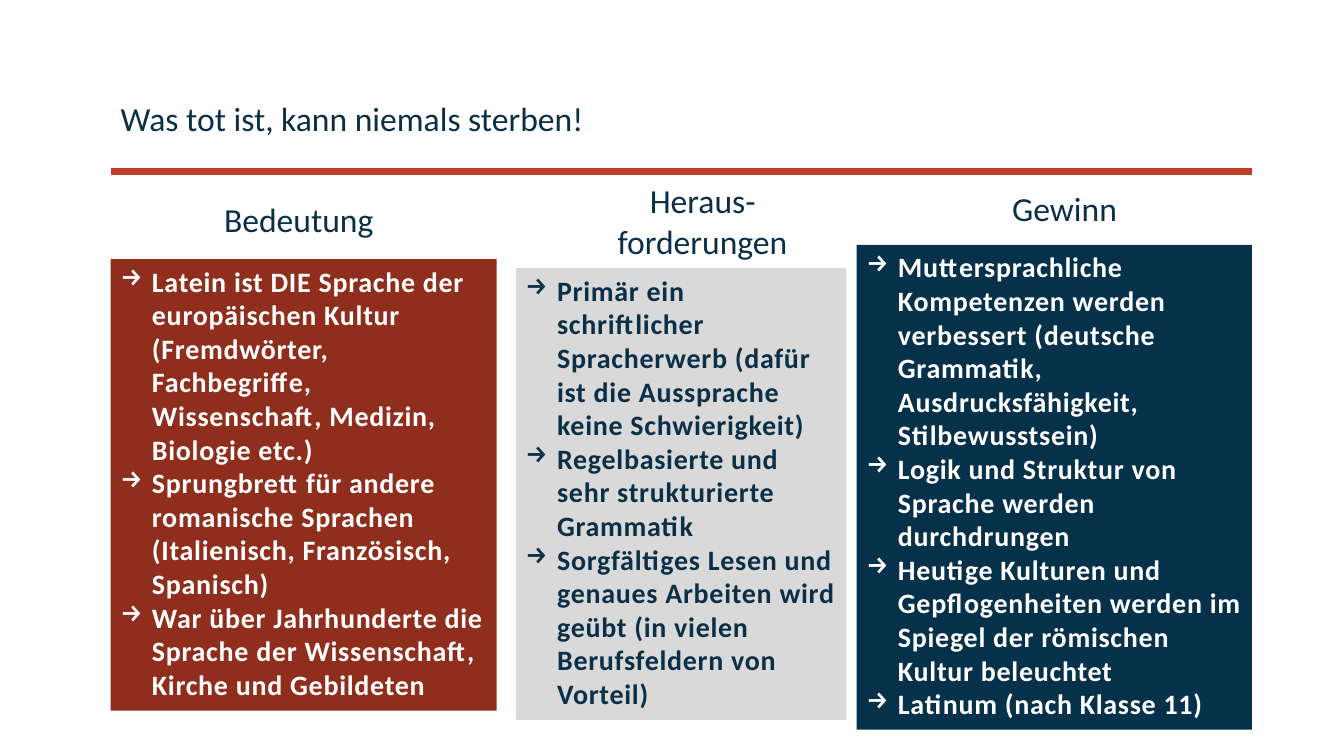
from dataclasses import dataclass

from lxml.etree import SubElement as Sub
from pptx import Presentation
from pptx.dml.color import RGBColor
from pptx.enum.shapes import MSO_CONNECTOR as Line, MSO_SHAPE as Form
from pptx.enum.text import MSO_ANCHOR as Anchor, MSO_AUTO_SIZE as Fit, PP_ALIGN as Align
from pptx.oxml.ns import qn
from pptx.slide import Slide
from pptx.text.text import TextFrame, _Paragraph as Para
from pptx.util import Cm, Pt

FACE = "Calibri"
WHITE = RGBColor(0xFF, 0xFF, 0xFF)
NAVY = RGBColor(0x0B, 0x2F, 0x46)
TITLE = RGBColor(0x0A, 0x2F, 0x46)
DEEP = RGBColor(0x05, 0x31, 0x4A)
RUST = RGBColor(0x8F, 0x2E, 0x1C)
RED = RGBColor(0xBF, 0x3E, 0x26)
GREY = RGBColor(0xD9, 0xD9, 0xD9)
LEFT, RIGHT, RULE = 2.79, 31.55, 4.32
INDENT = Cm(0.79)


@dataclass(frozen=True)
class Box:
    left: float
    top: float
    width: float
    height: float

    def place(self) -> tuple[Cm, Cm, Cm, Cm]:
        return Cm(self.left), Cm(self.top), Cm(self.width), Cm(self.height)


@dataclass(frozen=True)
class Column:
    head: str
    label: Box
    panel: Box
    fill: RGBColor
    ink: RGBColor
    points: tuple[str, ...]


COLUMNS = (
    Column("Bedeutung", Box(5.03, 4.88, 5, 1.27), Box(LEFT, 6.53, 9.73, 11.38), RUST, WHITE, (
        "Latein ist DIE Sprache der europäischen Kultur (Fremdwörter, Fachbegriffe, "
        "Wissenschaft, Medizin, Biologie etc.)",
        "Sprungbrett für andere romanische Sprachen (Italienisch, Französisch, Spanisch)",
        "War über Jahrhunderte die Sprache der Wissenschaft, Kirche und Gebildeten",
    )),
    Column("Heraus-forderungen", Box(14.81, 4.42, 5.79, 2.31), Box(13, 6.76, 8.33, 11.38), GREY, NAVY, (
        "Primär ein schriftlicher Spracherwerb (dafür ist die Aussprache keine Schwierigkeit)",
        "Regelbasierte und sehr strukturierte Grammatik",
        "Sorgfältiges Lesen und genaues Arbeiten wird geübt (in vielen Berufsfeldern von Vorteil)",
    )),
    Column("Gewinn", Box(24.33, 4.6, 5, 1.27), Box(21.59, 6.17, 9.96, 12.22), DEEP, WHITE, (
        "Muttersprachliche Kompetenzen werden verbessert (deutsche Grammatik, "
        "Ausdrucksfähigkeit, Stilbewusstsein)",
        "Logik und Struktur von Sprache werden durchdrungen",
        "Heutige Kulturen und Gepflogenheiten werden im Spiegel der römischen Kultur beleuchtet",
        "Latinum (nach Klasse 11)",
    )),
)


def style(para: Para, size: int, ink: RGBColor, bold: bool = False) -> None:
    font = para.font
    font.name, font.size, font.bold = FACE, Pt(size), bold
    font.color.rgb = ink


def add_text(slide: Slide, box: Box, text: str, ink: RGBColor, align: Align) -> TextFrame:
    frame = slide.shapes.add_textbox(*box.place()).text_frame
    frame.word_wrap = True
    para = frame.paragraphs[0]
    para.text, para.alignment = text, align
    style(para, 24, ink)
    return frame


def add_point(para: Para, text: str, ink: RGBColor) -> None:
    para.text, para.alignment = text, Align.LEFT
    props = para._p.get_or_add_pPr()
    props.set("marL", str(INDENT))
    props.set("indent", str(-INDENT))
    Sub(props, qn("a:buChar"), char="→")
    style(para, 20, ink, True)
    props.find(qn("a:defRPr")).set("spc", "50")


def add_panel(slide: Slide, col: Column) -> None:
    shape = slide.shapes.add_shape(Form.RECTANGLE, *col.panel.place())
    shape.shadow.inherit = False
    shape.fill.solid()
    shape.fill.fore_color.rgb = col.fill
    shape.line.fill.background()
    frame = shape.text_frame
    frame.word_wrap, frame.auto_size = True, Fit.SHAPE_TO_FIT_TEXT
    frame.vertical_anchor = Anchor.TOP
    for index, point in enumerate(col.points):
        add_point(frame.add_paragraph() if index else frame.paragraphs[0], point, col.ink)


def add_rule(slide: Slide) -> None:
    rule = slide.shapes.add_connector(Line.STRAIGHT, Cm(LEFT), Cm(RULE), Cm(RIGHT), Cm(RULE))
    rule.line.color.rgb, rule.line.width = RED, Pt(4.5)
    Sub(rule._element.spPr, qn("a:effectLst"))


def main() -> None:
    deck = Presentation()
    deck.slide_width, deck.slide_height = Cm(33.87), Cm(19.05)
    slide = deck.slides.add_slide(deck.slide_layouts[6])
    add_rule(slide)
    title = add_text(slide, Box(LEFT, 2.58, RIGHT - LEFT, 1.71),
                     "Was tot ist, kann niemals sterben!", TITLE, Align.LEFT)
    title.margin_top = title.margin_bottom = 0
    title.paragraphs[0].line_spacing = 0.9
    for col in COLUMNS:
        label = add_text(slide, col.label, col.head, NAVY, Align.CENTER)
        label.auto_size = Fit.SHAPE_TO_FIT_TEXT
    for col in COLUMNS:
        add_panel(slide, col)
    deck.save("out.pptx")


if __name__ == "__main__":
    main()
